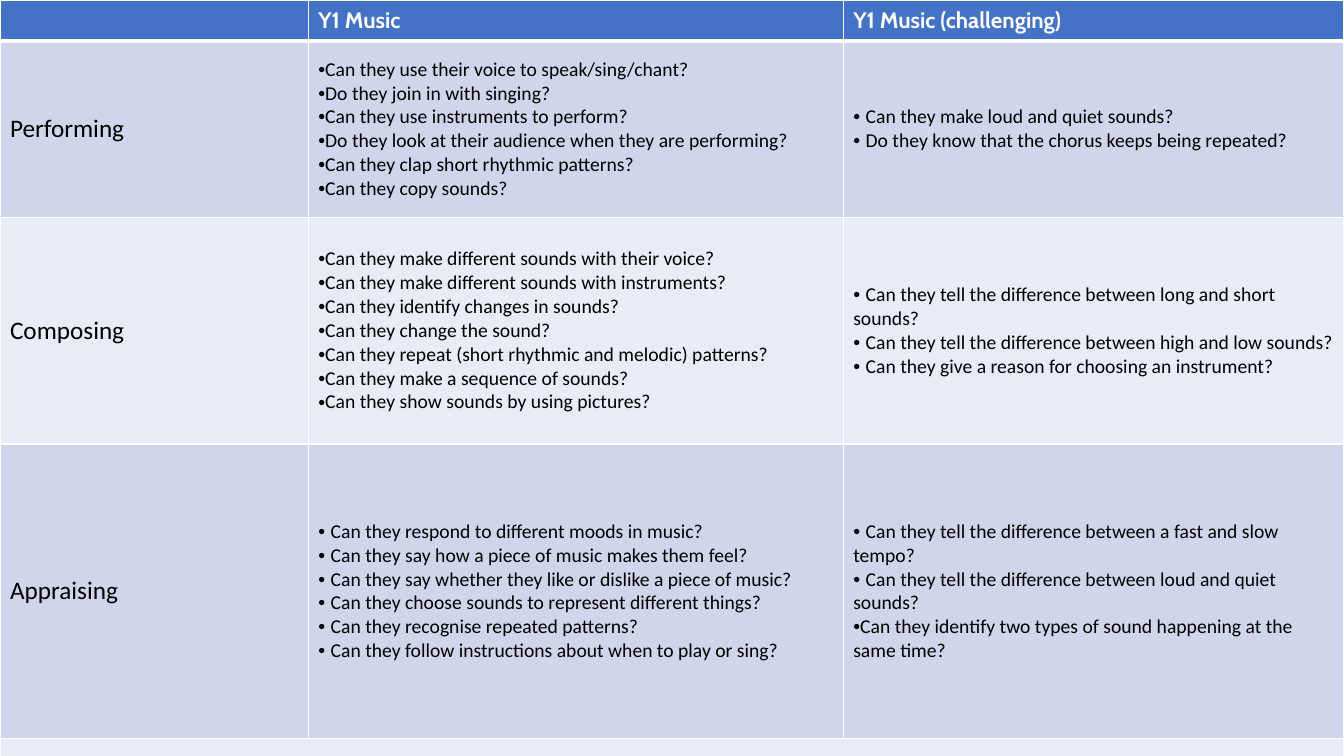
from lxml import etree
from pptx import Presentation
from pptx.dml.color import RGBColor
from pptx.enum.text import MSO_ANCHOR
from pptx.oxml.ns import qn
from pptx.util import Inches, Pt

MIDDLE = MSO_ANCHOR.MIDDLE
BLUE, BAND_DARK, BAND_LIGHT = "4472C4", "CFD5EA", "E9EBF5"
WHITE, BLACK = "FFFFFF", "000000"
HEADING = {"size": Pt(16), "name": "Cabin", "bold": True}
TOPIC = {"size": Pt(18), "name": "Calibri", "bold": False}
QUESTION = {"size": Pt(14), "name": "Calibri", "bold": False}
MARK = {"size": Pt(14), "name": "Arial", "bold": False}

COLUMN_WIDTHS = [3.06, 5.31, 4.97]
ROW_HEIGHTS = [0.29, 1.75, 2.25, 2.92, 0.29]
HEADINGS = ["", "Y1 Music", "Y1 Music (challenging)"]
TOPICS = [
    ("Performing", [
        "Can they use their voice to speak/sing/chant?",
        "Do they join in with singing?",
        "Can they use instruments to perform?",
        "Do they look at their audience when they are performing?",
        "Can they clap short rhythmic patterns?",
        "Can they copy sounds?",
    ], [
        "• Can they make loud and quiet sounds?",
        "• Do they know that the chorus keeps being repeated?",
    ]),
    ("Composing", [
        "Can they make different sounds with their voice?",
        "Can they make different sounds with instruments?",
        "Can they identify changes in sounds?",
        "Can they change the sound?",
        "Can they repeat (short rhythmic and melodic) patterns?",
        "Can they make a sequence of sounds?",
        "Can they show sounds by using pictures?",
    ], [
        "• Can they tell the difference between long and short sounds?",
        "• Can they tell the difference between high and low sounds?",
        "• Can they give a reason for choosing an instrument?",
    ]),
    ("Appraising", [
        "• Can they respond to different moods in music?",
        "• Can they say how a piece of music makes them feel?",
        "• Can they say whether they like or dislike a piece of music?",
        "• Can they choose sounds to represent different things?",
        "• Can they recognise repeated patterns?",
        "• Can they follow instructions about when to play or sing?",
    ], [
        "• Can they tell the difference between a fast and slow tempo?",
        "• Can they tell the difference between loud and quiet sounds?",
        "•Can they identify two types of sound happening at the same time?",
    ]),
]


def color(value):
    return RGBColor.from_string(value)


def add_span(para, text, style, ink):
    span = para.add_run()
    span.text = text
    for name, value in style.items():
        setattr(span.font, name, value)
    span.font.color.rgb = color(ink)


def add_bullet(para):
    properties = para._p.get_or_add_pPr()
    properties.set("marL", "0")
    properties.set("indent", "0")
    font = etree.SubElement(properties, qn("a:buFont"))
    font.set("typeface", "Arial")
    etree.SubElement(properties, qn("a:buChar")).set("char", "•")


def style_cell(cell, fill, bottom_width):
    cell.vertical_anchor = MIDDLE
    cell.fill.solid()
    cell.fill.fore_color.rgb = color(fill)
    properties = cell._tc.get_or_add_tcPr()
    widths = {"lnL": 1, "lnR": 1, "lnT": 1, "lnB": bottom_width}
    for position, (side, width) in enumerate(widths.items()):
        line = etree.Element(qn(f"a:{side}"), w=str(Pt(width)))
        solid = etree.SubElement(line, qn("a:solidFill"))
        etree.SubElement(solid, qn("a:srgbClr"), val=WHITE)
        properties.insert(position, line)


def write_label(cell, text, style, ink):
    if text:
        add_span(cell.text_frame.paragraphs[0], text, style, ink)


def write_questions(cell, questions):
    frame = cell.text_frame
    for index, question in enumerate(questions):
        para = frame.add_paragraph() if index else frame.paragraphs[0]
        if question.startswith("•"):
            text = question.lstrip("• ")
            add_span(para, question[:-len(text)], MARK, BLACK)
            add_span(para, text, QUESTION, BLACK)
        else:
            add_bullet(para)
            add_span(para, question, QUESTION, BLACK)


def add_skills_table(page, left, top, width, height):
    frame = page.shapes.add_table(
        len(ROW_HEIGHTS), len(COLUMN_WIDTHS),
        Inches(left), Inches(top), Inches(width), Inches(height))
    table = frame.table
    for column, share in zip(table.columns, COLUMN_WIDTHS):
        column.width = Inches(width * share / sum(COLUMN_WIDTHS))
    for row, share in zip(table.rows, ROW_HEIGHTS):
        row.height = Inches(height * share / sum(ROW_HEIGHTS))

    for index, row in enumerate(table.rows):
        band = BAND_DARK if index % 2 else BAND_LIGHT
        for cell in row.cells:
            style_cell(cell, band if index else BLUE, 1 if index else 3)

    for index, heading in enumerate(HEADINGS):
        write_label(table.cell(0, index), heading, HEADING, WHITE)
    for index, (topic, expected, challenging) in enumerate(TOPICS, 1):
        write_label(table.cell(index, 0), topic, TOPIC, BLACK)
        write_questions(table.cell(index, 1), expected)
        write_questions(table.cell(index, 2), challenging)

    last = len(ROW_HEIGHTS) - 1
    table.cell(last, 0).merge(table.cell(last, len(COLUMN_WIDTHS) - 1))


def main():
    deck = Presentation()
    deck.slide_width, deck.slide_height = Inches(13.33), Inches(7.5)
    page = deck.slides.add_slide(deck.slide_layouts[6])
    add_skills_table(page, 0, 0, 13.33, 7.5)
    deck.save("out.pptx")


if __name__ == "__main__":
    main()
